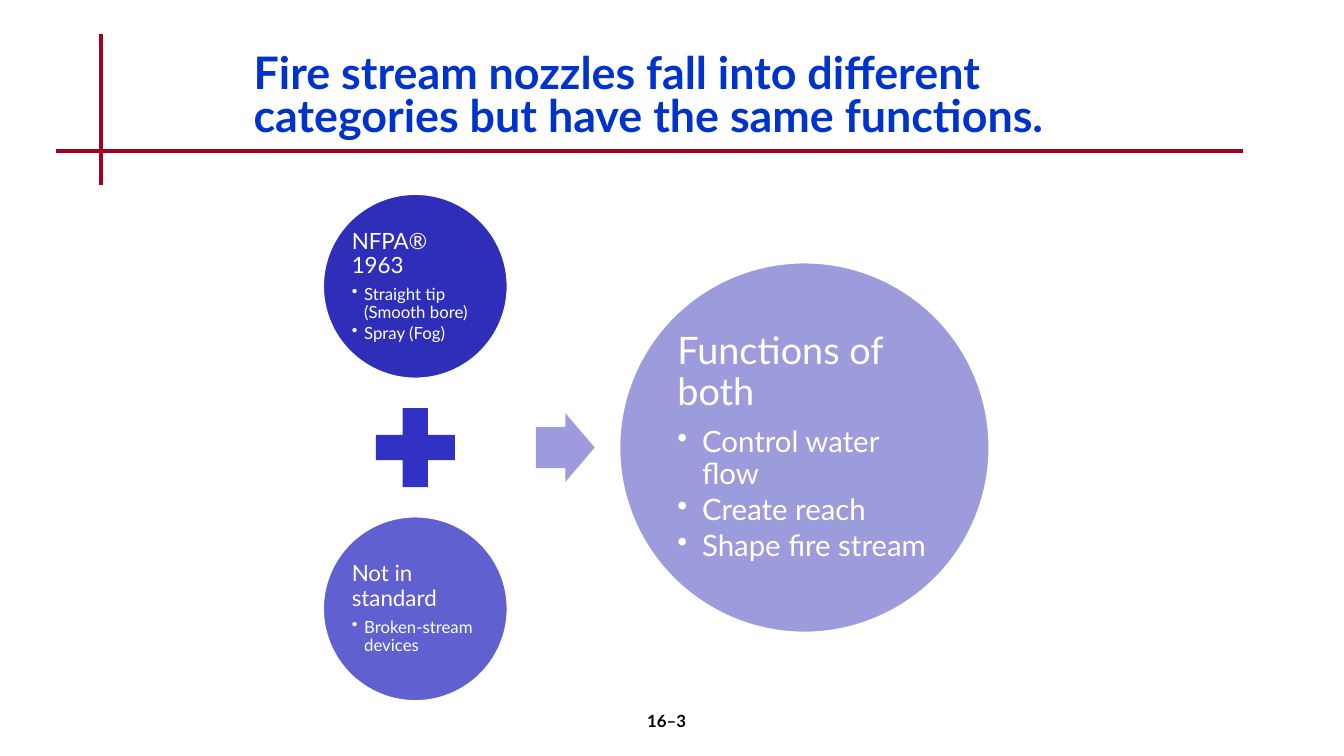
"""Build the slide on fire stream nozzle types and their shared functions."""
from lxml.etree import SubElement
from pptx import Presentation
from pptx.dml.color import RGBColor as Rgb
from pptx.enum.shapes import MSO_CONNECTOR as Link, MSO_SHAPE as Kind
from pptx.enum.text import MSO_ANCHOR as Anchor, PP_ALIGN as Align
from pptx.oxml.ns import qn
from pptx.util import Inches, Pt

COLORS = {
    "rule": "A50021", "title": "0033CC", "page": "000000", "white": "FFFFFF",
    "navy": "2E2EB9", "plus": "3131C3", "mid": "6060D0",
    "arrow": "9B9BDD", "pale": "9C9CDD",
}


class Board:
    """Draw styled elements on a slide grid of 160 columns by 90 rows."""

    font = "Lato"

    def __init__(self, deck):
        """Add a blank slide and work out the size of a grid cell."""
        self.slide = deck.slides.add_slide(deck.slide_layouts[6])
        self.cell = deck.slide_width / 160

    def grid(self, *cells):
        """Turn grid counts into lengths."""
        return [round(n * self.cell) for n in cells]

    def color(self, name):
        """Return a named colour."""
        return Rgb.from_string(COLORS[name])

    def rule(self, x1, y1, x2, y2):
        """Draw a straight red rule."""
        line = self.slide.shapes.add_connector(
            Link.STRAIGHT, *self.grid(x1, y1, x2, y2))
        line.line.color.rgb = self.color("rule")
        line.line.width = Pt(3)
        SubElement(line._element.spPr, qn("a:effectLst"))

    def shape(self, kind, x, y, w, h, fill, edge=None):
        """Draw a filled shape centred on a grid point."""
        item = self.slide.shapes.add_shape(
            kind, *self.grid(x - w / 2, y - h / 2, w, h))
        item.shadow.inherit = False
        item.fill.solid()
        item.fill.fore_color.rgb = self.color(fill)
        if edge:
            item.line.color.rgb = self.color(edge)
            item.line.width = Pt(2)
        else:
            item.line.fill.background()
        return item

    def frame(self, x, y, w, h, pad=(1.2, 0.6), anchor=Anchor.TOP):
        """Add a wrapping text box and return its text frame."""
        box = self.slide.shapes.add_textbox(*self.grid(x, y, w, h))
        text = box.text_frame
        text.word_wrap = True
        text.vertical_anchor = anchor
        text.margin_left, text.margin_top = self.grid(*pad)
        text.margin_right, text.margin_bottom = self.grid(*pad)
        return text

    def label(self, para, words, size, color, bold=False, lead=1.0):
        """Add one run of text to a paragraph."""
        para.line_spacing = lead
        run = para.add_run()
        run.text = words
        run.font.name = self.font
        run.font.size = Pt(size)
        run.font.bold = bold
        run.font.color.rgb = self.color(color)

    def bullet(self, para, indent):
        """Give a paragraph a hanging bullet."""
        para.level = 1
        props = para._p.get_or_add_pPr()
        step, = self.grid(indent)
        props.set("marL", str(step))
        props.set("indent", str(-step))
        SubElement(props, qn("a:buChar"), char="•")

    def bubble(self, x, y, size, fill, head, items, fonts):
        """Draw a circle with a heading and bullets in its inner square."""
        self.shape(Kind.OVAL, x, y, size, size, fill, "white")
        side = size / 2 ** 0.5
        text = self.frame(x - side / 2, y - side / 2, side, side,
                          (size / 90, size / 90), Anchor.MIDDLE)
        big, small = fonts
        para = text.paragraphs[0]
        para.space_after = Pt(big * 0.35)
        self.label(para, head, big, "white", lead=0.9)
        for item in items:
            para = text.add_paragraph()
            para.space_before = Pt(0)
            para.space_after = Pt(small * 0.15)
            self.bullet(para, size / 15)
            self.label(para, item, small, "white", lead=0.9)


def main():
    """Build and save the deck."""
    deck = Presentation()
    deck.slide_width, deck.slide_height = Inches(13.333), Inches(7.5)
    board = Board(deck)

    board.rule(12, 4, 12, 22)
    board.rule(6.7, 18, 148, 18)
    title = board.frame(29, 6, 109.6, 12).paragraphs[0]
    board.label(title, "Fire stream nozzles fall into different categories "
                "but have the same functions.", 32, "title", True, 0.8)
    page = board.frame(62.65, 84, 33.4, 6).paragraphs[0]
    page.alignment = Align.CENTER
    board.label(page, "16–3", 12, "page", True)

    left, mid, gap, size = 49.44, 53.28, 19.2, 22.08
    board.bubble(left, mid - gap, size, "navy", "NFPA® 1963",
                 ["Straight tip (Smooth bore)", "Spray (Fog)"], (16, 12))
    board.shape(Kind.MATH_PLUS, left, mid, 12.8, 12.8, "plus")
    board.bubble(left, mid + gap, size, "mid", "Not in standard",
                 ["Broken-stream devices"], (16, 12))
    arrow = board.shape(Kind.RIGHT_ARROW, 67.3, mid, 7, 8.2, "arrow")
    arrow.adjustments[0] = 0.6
    board.bubble(95.76, mid, size * 2, "pale", "Functions of both",
                 ["Control water flow", "Create reach", "Shape fire stream"],
                 (27, 21))
    deck.save("out.pptx")


if __name__ == "__main__":
    main()
